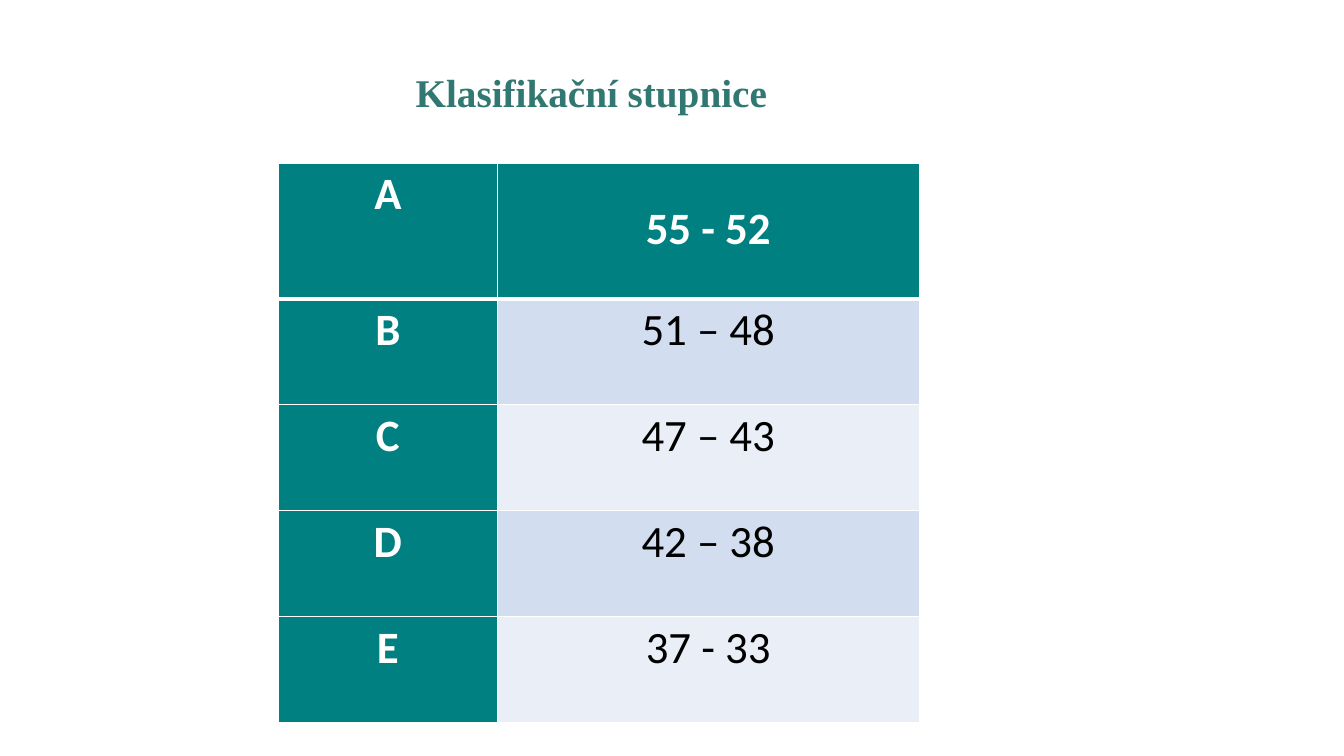
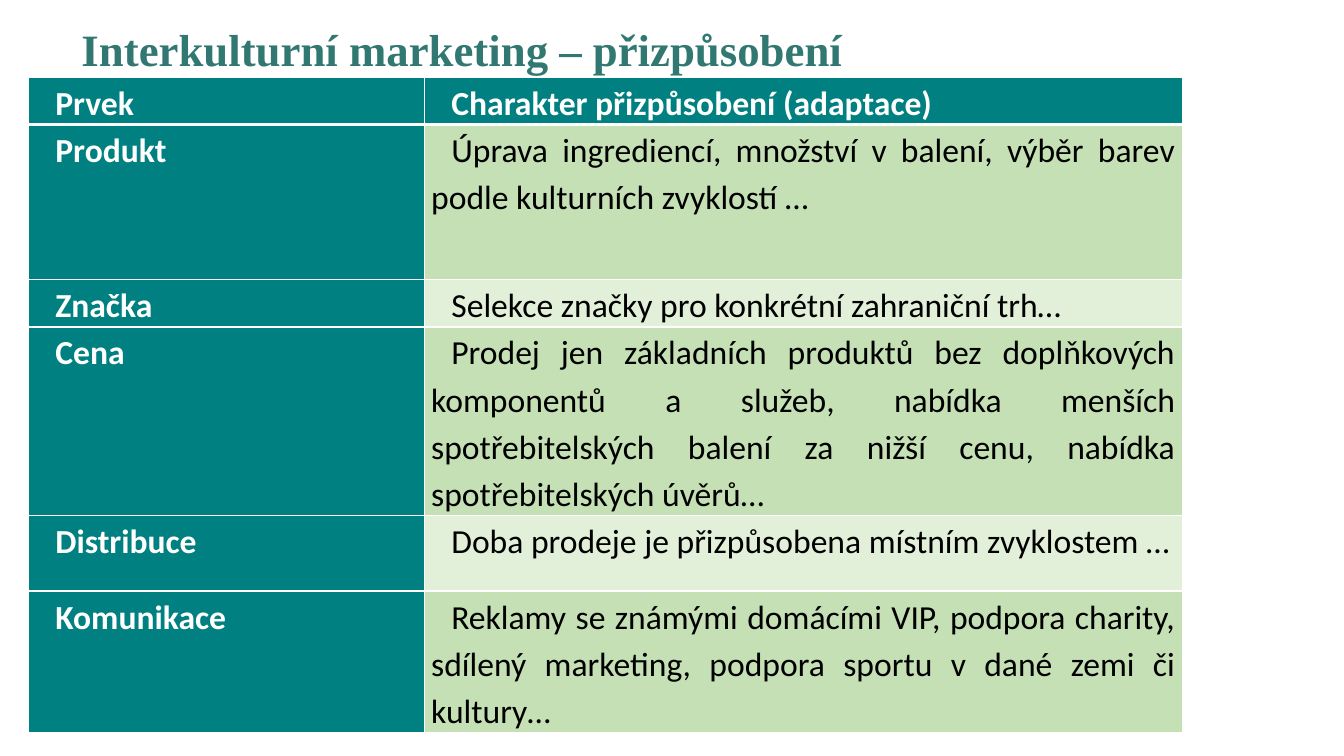
from lxml.etree import SubElement
from pptx import Presentation
from pptx.dml.color import RGBColor
from pptx.enum.text import MSO_ANCHOR, MSO_AUTO_SIZE, PP_ALIGN
from pptx.oxml.ns import qn
from pptx.util import Inches, Pt

COLORS = {
    "title": "307871",
    "header": "008080",
    "white": "FFFFFF",
    "black": "000000",
    "blue": "D2DEEF",
    "pale_blue": "EAEFF7",
    "green": "C5E0B4",
    "pale_green": "E2F0D9",
}
TITLE_FONT = "Times New Roman"
TABLE_FONT = "Calibri"
GRID_COLUMNS = 160
GRID_ROWS = 90
TITLE_ONLY = 5

GRADES = [
    ("A", "55 - 52"),
    ("B", "51 – 48"),
    ("C", "47 – 43"),
    ("D", "42 – 38"),
    ("E", "37 - 33"),
]
ADAPTATION = [
    ("Prvek", "Charakter přizpůsobení (adaptace)"),
    ("Produkt", "Úprava ingrediencí, množství v balení, výběr barev podle kulturních zvyklostí …"),
    ("Značka", "Selekce značky pro konkrétní zahraniční trh…"),
    ("Cena", "Prodej jen základních produktů bez doplňkových komponentů a služeb, "
             "nabídka menších spotřebitelských balení za nižší cenu, "
             "nabídka spotřebitelských úvěrů…"),
    ("Distribuce", "Doba prodeje je přizpůsobena místním zvyklostem …"),
    ("Komunikace", "Reklamy se známými domácími VIP, podpora charity, sdílený marketing, "
                   "podpora sportu v dané zemi či kultury…"),
]


class Deck:
    """Holds the shared style, the grid and the current slide."""

    def __init__(self):
        self.deck = Presentation()
        self.deck.slide_width = Inches(13.33)
        self.deck.slide_height = Inches(7.5)
        self.unit_x = self.deck.slide_width / GRID_COLUMNS
        self.unit_y = self.deck.slide_height / GRID_ROWS
        self.page = None

    def across(self, columns):
        """Turn grid columns into a length."""
        return round(columns * self.unit_x)

    def down(self, rows):
        """Turn grid rows into a length."""
        return round(rows * self.unit_y)

    def add_page(self):
        """Start a new slide."""
        layout = self.deck.slide_layouts[TITLE_ONLY]
        self.page = self.deck.slides.add_slide(layout)

    def add_span(self, paragraph, text, size, font, color, bold):
        """Add one formatted run to a paragraph."""
        span = paragraph.add_run()
        span.text = text
        span.font.size = Pt(size)
        span.font.name = font
        span.font.bold = bold
        span.font.color.rgb = RGBColor.from_string(COLORS[color])

    def title(self, text, left, top, width, height, size, align):
        """Place and fill the title placeholder."""
        box = self.page.shapes.title
        box.left, box.top = self.across(left), self.down(top)
        box.width, box.height = self.across(width), self.down(height)
        frame = box.text_frame
        frame.word_wrap = False
        frame.auto_size = MSO_AUTO_SIZE.NONE
        frame.vertical_anchor = MSO_ANCHOR.TOP
        paragraph = frame.paragraphs[0]
        paragraph.alignment = align
        self.add_span(paragraph, text, size, TITLE_FONT, "title", True)

    def border(self, cell, side, points):
        """Draw one white edge of a cell."""
        properties = cell._tc.get_or_add_tcPr()
        line = SubElement(properties, qn(f"a:ln{side}"), w=str(Pt(points)))
        fill = SubElement(line, qn("a:solidFill"))
        SubElement(fill, qn("a:srgbClr"), val=COLORS["white"])

    def cell(self, cell, text, row, is_header, bands, size, align, spacing, indent, margins):
        """Style and fill one table cell."""
        for side in "LRTB":
            thick = (side, row) in (("B", 0), ("T", 1))
            self.border(cell, side, 3 if thick else 1)
        fill = "header" if is_header else bands[(row - 1) % 2]
        cell.fill.solid()
        cell.fill.fore_color.rgb = RGBColor.from_string(COLORS[fill])
        cell.vertical_anchor = MSO_ANCHOR.TOP
        side_margin, top_margin = margins
        cell.margin_left = cell.margin_right = self.across(side_margin)
        cell.margin_top, cell.margin_bottom = self.down(top_margin), 0
        paragraph = cell.text_frame.paragraphs[0]
        paragraph.alignment = align
        paragraph.line_spacing = spacing
        paragraph._p.get_or_add_pPr().set("indent", str(self.across(indent)))
        color = "white" if is_header else "black"
        self.add_span(paragraph, text, size, TABLE_FONT, color, is_header)

    def table(self, entries, left, top, columns, rows, bands, size, align,
              spacing=1.0, indent=0, margins=(0.96, 0.5), raised=None):
        """Add a table with a header row, a header column and banded cells."""
        frame = self.page.shapes.add_table(
            len(rows), len(columns), self.across(left), self.down(top),
            self.across(sum(columns)), self.down(sum(rows)))
        table = frame.table
        for column, width in zip(table.columns, columns):
            column.width = self.across(width)
        for row, height in zip(table.rows, rows):
            row.height = self.down(height)
        for row, texts in enumerate(entries):
            for column, text in enumerate(texts):
                is_header = row == 0 or column == 0
                cell_margins = (raised or {}).get((row, column), margins)
                self.cell(table.cell(row, column), text, row, is_header, bands,
                          size, align, spacing, indent, cell_margins)


def main():
    """Build both slides and save the deck."""
    deck = Deck()

    deck.add_page()
    deck.title("Klasifikační stupnice", 48, 7.55, 44.8, 6.85, 28, PP_ALIGN.CENTER)
    deck.table(GRADES, 33.15, 19.4, (26.05, 50.25), (16.2,) + (12.6,) * 4,
               ("blue", "pale_blue"), 32, PP_ALIGN.CENTER,
               raised={(0, 1): (0.96, 4.65)})

    deck.add_page()
    deck.title("Interkulturní marketing – přizpůsobení", 8.5, 2, 122.2, 7.7, 32, PP_ALIGN.LEFT)
    deck.table(ADAPTATION, 3.35, 9.2, (47.15, 90.25), (5.55, 18.5, 5.6, 22, 9, 16.4),
               ("green", "pale_green"), 24, PP_ALIGN.JUSTIFY,
               spacing=1.15, indent=2.4, margins=(0.84, 0))

    deck.deck.save("out.pptx")


if __name__ == "__main__":
    main()
